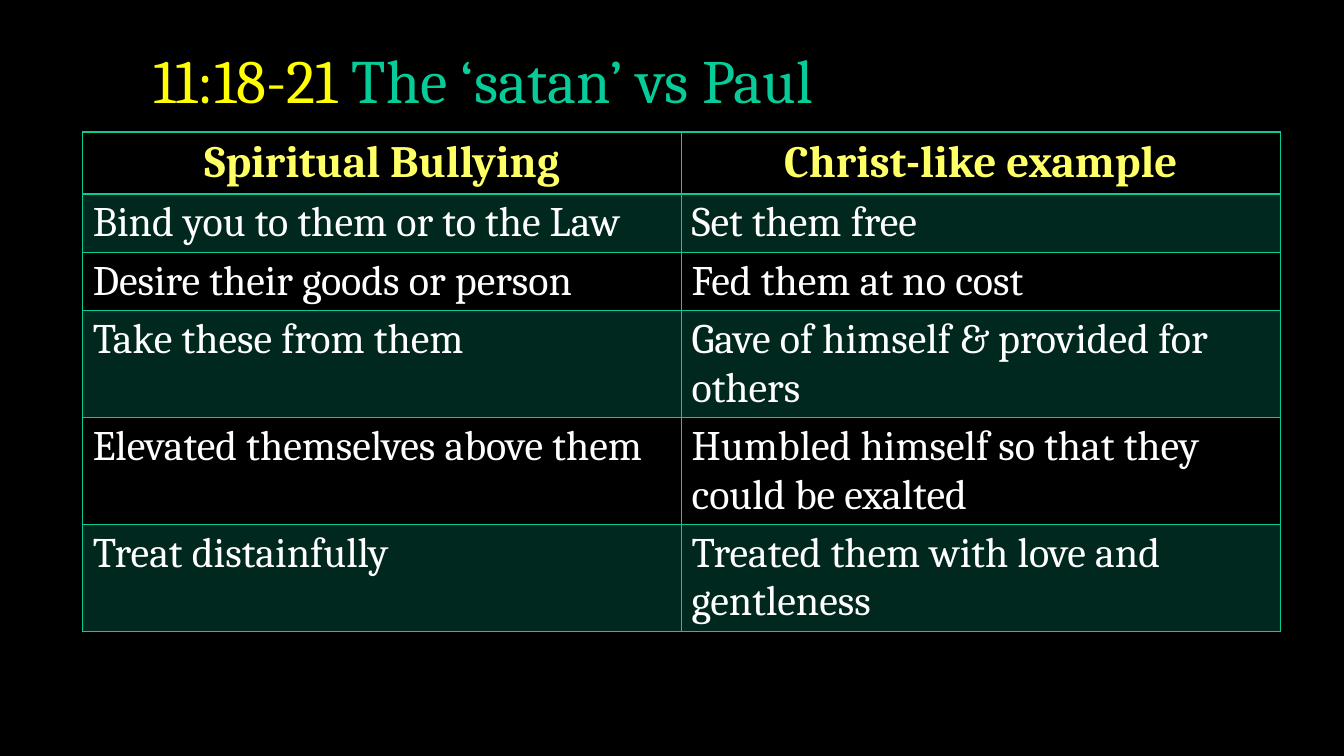
from lxml.etree import SubElement
from pptx import Presentation
from pptx.dml.color import RGBColor
from pptx.enum.text import MSO_ANCHOR, MSO_AUTO_SIZE, PP_ALIGN
from pptx.oxml.ns import qn
from pptx.util import Inches, Pt

HUES = {"back": "000000", "verse": "FFFF00", "green": "07CB98",
        "head": "FFFF66", "text": "FFFFFF"}
ROWS = [
    ("Spiritual Bullying", "Christ-like example"),
    ("Bind you to them or to the Law", "Set them free"),
    ("Desire their goods or person", "Fed them at no cost"),
    ("Take these from them", "Gave of himself & provided for others"),
    ("Elevated themselves above them",
     "Humbled himself so that they could be exalted"),
    ("Treat distainfully", "Treated them with love and gentleness"),
]


class Deck:
    """Holds the style and the current slide, and adds elements to it."""

    def __init__(self, hues, face):
        self.hues, self.face = hues, face
        self.show = Presentation()
        self.show.slide_width = Inches(13.33)
        self.show.slide_height = Inches(7.5)
        self.slide = self.show.slides.add_slide(self.show.slide_layouts[5])
        fill = self.slide.background.fill
        fill.solid()
        fill.fore_color.rgb = self.tint("back")

    def tint(self, hue):
        return RGBColor.from_string(self.hues[hue])

    def label(self, para, text, hue, size, bold=False):
        run = para.add_run()
        run.text = text
        form = {"name": self.face, "size": Pt(size), "bold": bold}
        for key, value in form.items():
            setattr(run.font, key, value)
        run.font.color.rgb = self.tint(hue)

    def title(self, box, parts, size):
        shape = self.slide.shapes.title
        for key, value in zip(("left", "top", "width", "height"), box):
            setattr(shape, key, Inches(value))
        frame = shape.text_frame
        form = {"vertical_anchor": MSO_ANCHOR.BOTTOM, "word_wrap": True,
                "auto_size": MSO_AUTO_SIZE.NONE}
        for key, value in form.items():
            setattr(frame, key, value)
        para = frame.paragraphs[0]
        para.alignment = PP_ALIGN.LEFT
        para.line_spacing = 0.9
        for text, hue in parts:
            self.label(para, text, hue, size)

    def edge(self, cell, side, width):
        props = cell._tc.get_or_add_tcPr()
        line = SubElement(props, qn(f"a:ln{side}"), w=str(Pt(width)))
        fill = SubElement(line, qn("a:solidFill"))
        SubElement(fill, qn("a:srgbClr"), val=self.hues["green"])

    def shade(self, cell, band):
        if not band:
            cell.fill.background()
            return
        cell.fill.solid()
        cell.fill.fore_color.rgb = self.tint("green")
        color = cell._tc.tcPr.find(f"{qn('a:solidFill')}/{qn('a:srgbClr')}")
        SubElement(color, qn("a:alpha"), val="20000")

    def table(self, left, top, width, high, rows):
        frame = self.slide.shapes.add_table(
            len(rows), len(rows[0]), Inches(left), Inches(top),
            Inches(width), Inches(high * len(rows)))
        for r, row in enumerate(rows):
            for c, text in enumerate(row):
                cell = frame.table.cell(r, c)
                para = cell.text_frame.paragraphs[0]
                if r == 0:
                    para.alignment = PP_ALIGN.CENTER
                    self.label(para, text, "head", 32, True)
                else:
                    self.label(para, text, "text", 30)
                for side in "LRTB":
                    thick = (r, side) in ((0, "B"), (1, "T"))
                    self.edge(cell, side, 2 if thick else 1)
                self.shade(cell, r % 2)

    def save(self):
        self.show.save("out.pptx")


def main():
    deck = Deck(HUES, "Cambria")
    deck.title((1.42, 0.04, 10.5, 1.17),
               [("11:18-21", "verse"), (" The ‘satan’ vs Paul", "green")], 44)
    deck.table(0.82, 1.31, 11.88, 0.41, ROWS)
    deck.save()


if __name__ == "__main__":
    main()
